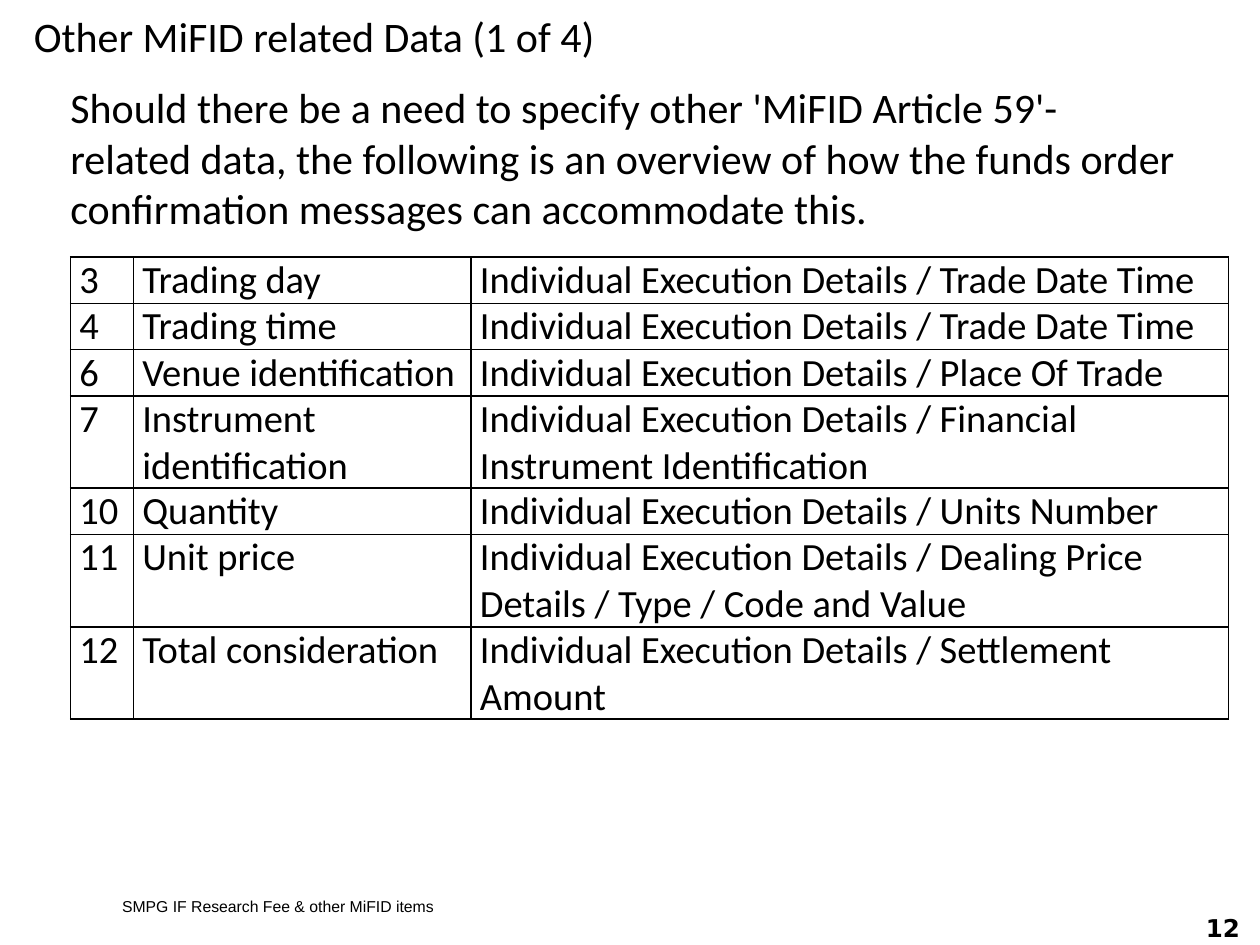
import pptx
import pptx.dml.color
import pptx.enum.text
import pptx.oxml.ns
import pptx.util
from lxml import etree

Inches = pptx.util.Inches
Pt = pptx.util.Pt
ANCHOR = pptx.enum.text.MSO_ANCHOR
ALIGN = pptx.enum.text.PP_ALIGN
COLORS = {"text": "000000", "border": "000000", "cell": "FFFFFF"}


def write(tf, text, font, align=ALIGN.LEFT):
    p = tf.paragraphs[0]
    p.alignment = align
    r = p.add_run()
    r.text = text
    for name, value in font.items():
        setattr(r.font, name, value)
    r.font.color.rgb = pptx.dml.color.RGBColor.from_string(COLORS["text"])
    return p


def add_border(tc_pr, side):
    ln = etree.SubElement(tc_pr, pptx.oxml.ns.qn(f"a:{side}"), w=str(Pt(1)))
    fill = etree.SubElement(ln, pptx.oxml.ns.qn("a:solidFill"))
    etree.SubElement(fill, pptx.oxml.ns.qn("a:srgbClr"), val=COLORS["border"])


prs = pptx.Presentation()
prs.slide_width, prs.slide_height = Inches(10), Inches(7.5)
s = prs.slides.add_slide(prs.slide_layouts[6])

heading = {"name": "Calibri", "size": Pt(24)}
boxes = [
    ("Other MiFID related Data (1 of 4)",
     (0.17, 0, 9.73, 0.56), heading, ANCHOR.MIDDLE, ALIGN.LEFT),
    ("SMPG IF Research Fee & other MiFID items",
     (0.87, 7.07, 6.21, 0.25), {"name": "Arial", "size": Pt(9)}, ANCHOR.MIDDLE, ALIGN.LEFT),
    ("12",
     (9.11, 7.24, 0.83, 0.25), {"name": "DejaVu Sans", "size": Pt(14), "bold": True},
     ANCHOR.MIDDLE, ALIGN.RIGHT),
    ("Should there be a need to specify other 'MiFID Article 59'-related data, the following "
     "is an overview of how the funds order confirmation messages can accommodate this.",
     (0.46, 0.6, 8.98, 1.31), heading, ANCHOR.TOP, ALIGN.LEFT),
]
for text, place, font, anchor, align in boxes:
    tf = s.shapes.add_textbox(*map(Inches, place)).text_frame
    tf.word_wrap = True
    tf.vertical_anchor = anchor
    write(tf, text, font, align)

rows = [
    ("3", "Trading day", "Trade Date Time", 1),
    ("4", "Trading time", "Trade Date Time", 1),
    ("6", "Venue identification", "Place Of Trade", 1),
    ("7", "Instrument identification", "Financial Instrument Identification", 2),
    ("10", "Quantity", "Units Number", 1),
    ("11", "Unit price", "Dealing Price Details / Type / Code and Value", 2),
    ("12", "Total consideration", "Settlement Amount", 2),
]
widths = [0.5, 2.68, 6.01]
cell_format = {"margin_left": Inches(0.07), "margin_right": Inches(0.07),
               "margin_top": 0, "margin_bottom": 0}
table = s.shapes.add_table(len(rows), len(widths), Inches(0.56), Inches(2.04),
                           Inches(sum(widths)), Inches(3.67)).table
table.first_row = table.horz_banding = False
for column, width in zip(table.columns, widths):
    column.width = Inches(width)
for i, (number, item, field, lines) in enumerate(rows):
    table.rows[i].height = Inches(0.36 * lines)
    for j, text in enumerate((number, item, f"Individual Execution Details / {field}")):
        cell = table.cell(i, j)
        for name, value in cell_format.items():
            setattr(cell, name, value)
        p = write(cell.text_frame, text, {"name": "Calibri", "size": Pt(22)})
        p.space_after = Pt(1)
        for side in ("lnL", "lnR", "lnT", "lnB"):
            add_border(cell._tc.get_or_add_tcPr(), side)
        cell.fill.solid()
        cell.fill.fore_color.rgb = pptx.dml.color.RGBColor.from_string(COLORS["cell"])

prs.save("out.pptx")
